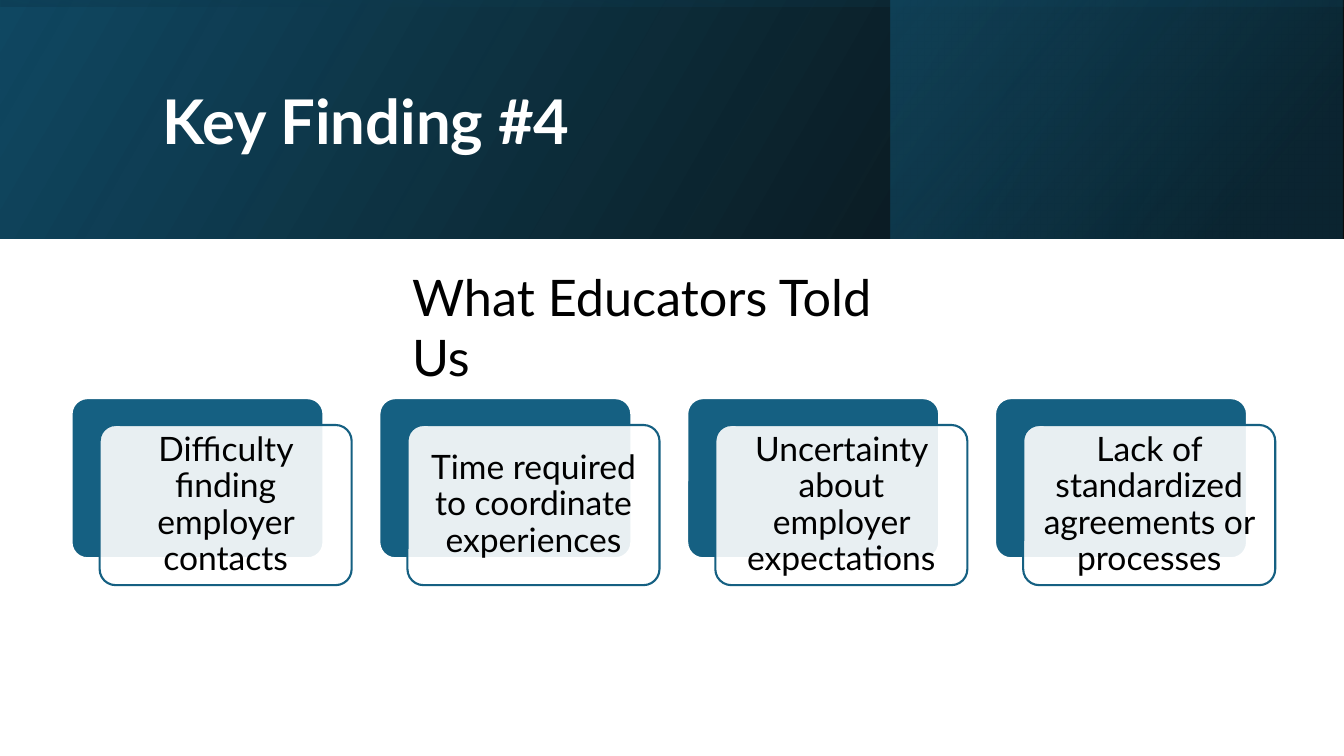
"""Build the Key Finding #4 slide with a gradient banner and four cards."""
from lxml import etree
from pptx import Presentation
from pptx.dml.color import RGBColor
from pptx.enum import shapes, text
from pptx.oxml import ns
from pptx.util import Pt

WHITE = RGBColor(0xFF, 0xFF, 0xFF)
BLACK = RGBColor(0x00, 0x00, 0x00)
TEAL = RGBColor(0x15, 0x60, 0x82)
DEEP = RGBColor(0x10, 0x48, 0x62)
NAVY = RGBColor(0x0B, 0x30, 0x41)


def fade(shape, alphas):
    colors = list(shape._element.spPr.iter(ns.qn("a:srgbClr")))
    for color, alpha in zip(colors, alphas):
        etree.SubElement(color, ns.qn("a:alpha"), val=str(alpha * 1000))


def style(frame, size, color, bold=False):
    font = frame.paragraphs[0].runs[0].font
    font.name, font.size, font.bold = "Lato", Pt(size), bold
    font.color.rgb = color


deck = Presentation()
deck.slide_width, deck.slide_height = Pt(960), Pt(540)
slide = deck.slides.add_slide(deck.slide_layouts[5])

bands = [
    ((0, 0, 960, 170.7), 0, 30, [(0, BLACK, 96), (1, DEEP, 100)]),
    ((636.5, 0, 322.7, 170.7), 0, 40, [(0.19, NAVY, 68), (1, TEAL, 48)]),
    ((394.65, -394.65, 170.7, 960), 270, 10, [(0.23, DEEP, 16), (0.99, BLACK, 45)]),
]
for box, turn, angle, stops in bands:
    band = slide.shapes.add_shape(shapes.MSO_SHAPE.RECTANGLE, *map(Pt, box))
    band.shadow.inherit = False
    band.rotation = turn
    band._element.spPr.find(ns.qn("a:xfrm")).set("flipH", "1")
    band.fill.gradient()
    band.fill.gradient_angle = angle
    for stop, (place, color, alpha) in zip(band.fill.gradient_stops, stops):
        stop.position = place
        stop.color.rgb = color
    fade(band, [alpha for place, color, alpha in stops])
    band.line.fill.background()

title = slide.shapes.title
slide.shapes._spTree.append(title._element)
title.left, title.top, title.width, title.height = map(Pt, (108.7, 27.4, 765.4, 123.8))
frame = title.text_frame
frame.text = "Key Finding #4"
frame.auto_size = text.MSO_AUTO_SIZE.NONE
frame.vertical_anchor = text.MSO_ANCHOR.MIDDLE
frame.paragraphs[0].alignment = text.PP_ALIGN.LEFT
frame.paragraphs[0].line_spacing = 0.9
style(frame, 44, WHITE, True)

cards = [
    "Difficulty finding employer contacts",
    "Time required to coordinate experiences",
    "Uncertainty about employer expectations",
    "Lack of standardized agreements or processes",
]
for i, words in enumerate(cards):
    left = 51.1 + 219.9 * i
    for x, y, fill, line in ((left, 284.4, TEAL, WHITE), (left + 20.1, 303.6, WHITE, TEAL)):
        card = slide.shapes.add_shape(
            shapes.MSO_SHAPE.ROUNDED_RECTANGLE, Pt(x), Pt(y), Pt(180), Pt(114.4))
        card.adjustments[0] = 0.1
        card.shadow.inherit = False
        card.fill.solid()
        card.fill.fore_color.rgb = fill
        card.line.color.rgb = line
        card.line.width = Pt(1.5)
    fade(card, [90])
    frame = card.text_frame
    frame.text = words
    frame.word_wrap = True
    frame.vertical_anchor = text.MSO_ANCHOR.MIDDLE
    frame.margin_left = frame.margin_right = Pt(7.2)
    frame.margin_top = frame.margin_bottom = Pt(7.2)
    frame.paragraphs[0].alignment = text.PP_ALIGN.CENTER
    frame.paragraphs[0].line_spacing = 0.9
    style(frame, 24, BLACK)

head = slide.shapes.add_textbox(Pt(287.3), Pt(186.5), Pt(385.9), Pt(51.1))
frame = head.text_frame
frame.text = "What Educators Told Us"
frame.word_wrap = True
frame.auto_size = text.MSO_AUTO_SIZE.SHAPE_TO_FIT_TEXT
style(frame, 36, BLACK)

deck.save("out.pptx")
